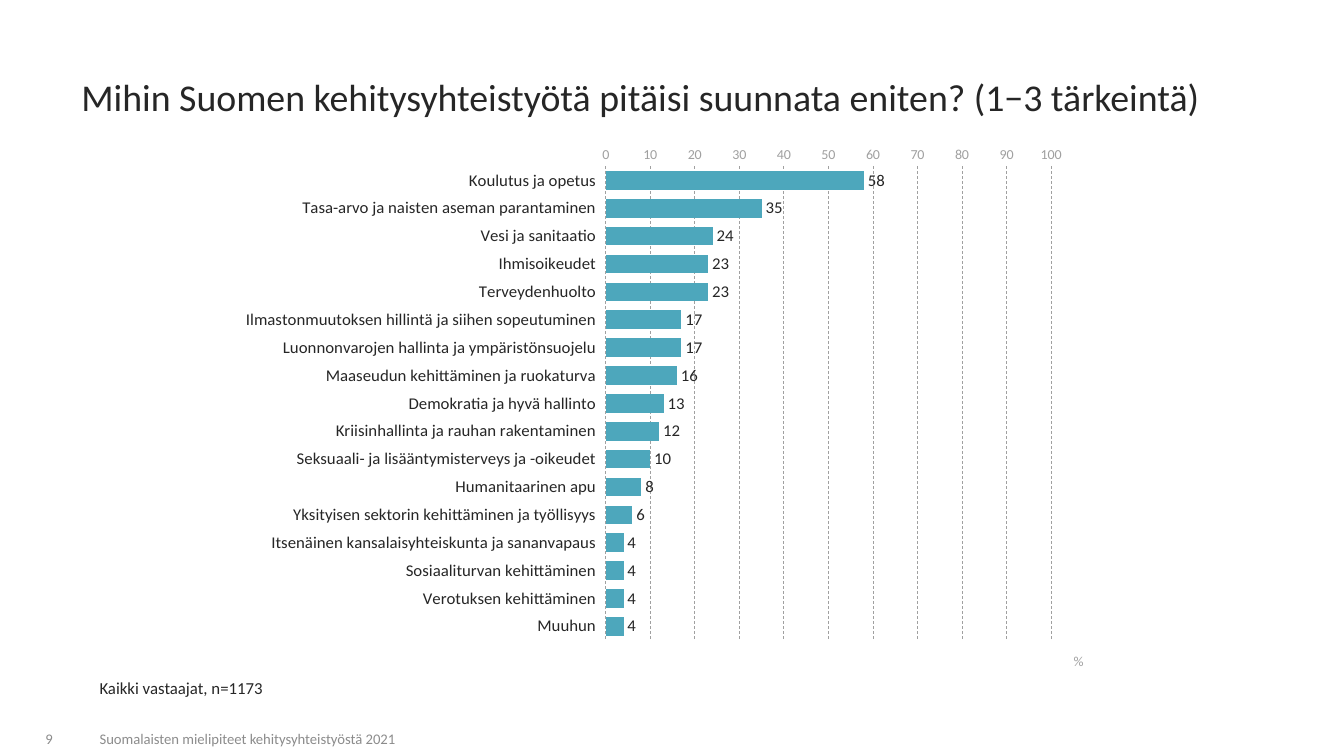
from lxml import etree
from pptx import Presentation
from pptx.chart.data import CategoryChartData
from pptx.dml.color import RGBColor
from pptx.enum.chart import XL_AXIS_CROSSES, XL_CHART_TYPE, XL_LABEL_POSITION, XL_TICK_LABEL_POSITION, XL_TICK_MARK
from pptx.enum.dml import MSO_LINE
from pptx.enum.text import MSO_ANCHOR, PP_ALIGN
from pptx.oxml.ns import qn
from pptx.util import Cm, Pt

COLORS = {"text": "262626", "footer": "8C8C8C", "axis": "A0A0A0", "bar": "4DA7BC"}
FONT = "Calibri"

PRIORITIES = [
    ("Koulutus ja opetus", 58),
    ("Tasa-arvo ja naisten aseman parantaminen", 35),
    ("Vesi ja sanitaatio", 24),
    ("Ihmisoikeudet", 23),
    ("Terveydenhuolto", 23),
    ("Ilmastonmuutoksen hillintä ja siihen sopeutuminen", 17),
    ("Luonnonvarojen hallinta ja ympäristönsuojelu", 17),
    ("Maaseudun kehittäminen ja ruokaturva", 16),
    ("Demokratia ja hyvä hallinto", 13),
    ("Kriisinhallinta ja rauhan rakentaminen", 12),
    ("Seksuaali- ja lisääntymisterveys ja -oikeudet", 10),
    ("Humanitaarinen apu", 8),
    ("Yksityisen sektorin kehittäminen ja työllisyys", 6),
    ("Itsenäinen kansalaisyhteiskunta ja sananvapaus", 4),
    ("Sosiaaliturvan kehittäminen", 4),
    ("Verotuksen kehittäminen", 4),
    ("Muuhun", 4),
]


def style_font(font, size, color):
    font.name = FONT
    font.size = Pt(size)
    font.bold = False
    font.color.rgb = RGBColor.from_string(COLORS[color])


def add_text(page, box, text, size, color, anchor=MSO_ANCHOR.TOP, align=PP_ALIGN.LEFT, spacing=1.0):
    frame = page.shapes.add_textbox(*map(Cm, box)).text_frame
    frame.word_wrap = True
    frame.vertical_anchor = anchor
    para = frame.paragraphs[0]
    para.text = text
    para.alignment = align
    para.line_spacing = spacing
    style_font(para.font, size, color)


def set_layout(parent, position, **settings):
    for previous in parent.findall(qn("c:layout")):
        parent.remove(previous)
    layout = etree.Element(qn("c:layout"))
    manual = etree.SubElement(layout, qn("c:manualLayout"))
    for name, value in settings.items():
        etree.SubElement(manual, qn(f"c:{name}")).set("val", str(value))
    parent.insert(position, layout)


def style_category_axis(axis):
    axis.reverse_order = True
    axis.crosses = XL_AXIS_CROSSES.MAXIMUM
    axis.tick_label_position = XL_TICK_LABEL_POSITION.LOW
    axis.major_tick_mark = XL_TICK_MARK.NONE
    axis.format.line.fill.background()
    style_font(axis.tick_labels.font, 12, "text")


def style_value_axis(axis):
    axis.minimum_scale = 0
    axis.maximum_scale = 100
    axis.major_unit = 10
    axis.major_tick_mark = XL_TICK_MARK.NONE
    axis.format.line.fill.background()
    style_font(axis.tick_labels.font, 10, "axis")
    axis.tick_labels.number_format = "General"
    axis.tick_labels.number_format_is_linked = False
    grid = axis.major_gridlines.format.line
    grid.color.rgb = RGBColor.from_string(COLORS["axis"])
    grid.width = Pt(0.5)
    grid.dash_style = MSO_LINE.DASH
    para = axis.axis_title.text_frame.paragraphs[0]
    para.text = "%"
    style_font(para.font, 10, "axis")
    set_layout(axis.axis_title._element, 1, xMode="edge", yMode="edge", x=0.98, y=0.95)


def add_priority_chart(page, box):
    chart_data = CategoryChartData()
    chart_data.categories = [label for label, share in PRIORITIES]
    chart_data.add_series("Series 1", [share for label, share in PRIORITIES])
    chart = page.shapes.add_chart(XL_CHART_TYPE.BAR_CLUSTERED, *map(Cm, box), chart_data).chart
    chart.has_legend = False
    chart.has_title = False
    style_font(chart.font, 12, "text")
    style_category_axis(chart.category_axis)
    style_value_axis(chart.value_axis)

    plot = chart.plots[0]
    plot.gap_width = 50
    plot.vary_by_categories = False
    fill = plot.series[0].format.fill
    fill.solid()
    fill.fore_color.rgb = RGBColor.from_string(COLORS["bar"])
    plot.has_data_labels = True
    labels = plot.data_labels
    labels.show_value = True
    labels.position = XL_LABEL_POSITION.OUTSIDE_END
    labels.number_format = "#,##0"
    labels.number_format_is_linked = False
    style_font(labels.font, 12, "text")

    plot_area = chart._chartSpace.find(f".//{qn('c:plotArea')}")
    set_layout(plot_area, 0, layoutTarget="inner", xMode="edge", yMode="edge",
               x=0.443, y=0.012, w=0.514, h=0.92)


def add_footer(page, box):
    left, top, width, height = box
    number_width = 1.5
    text_left = left + 2.18
    add_text(page, (left, top, number_width, height), "9", 10.5, "footer",
             MSO_ANCHOR.BOTTOM, PP_ALIGN.RIGHT)
    add_text(page, (text_left, top, width - 2.18, height),
             "Suomalaisten mielipiteet kehitysyhteistyöstä 2021", 10.5, "footer", MSO_ANCHOR.BOTTOM)


def main():
    deck = Presentation()
    deck.slide_width = Cm(33.87)
    deck.slide_height = Cm(19.05)
    page = deck.slides.add_slide(deck.slide_layouts[6])
    add_footer(page, (0.08, 18.19, 17.22, 0.76))
    add_text(page, (1.8, 1.63, 30.66, 1.73),
             "Mihin Suomen kehitysyhteistyötä pitäisi suunnata eniten? (1−3 tärkeintä)",
             27, "text", MSO_ANCHOR.MIDDLE, spacing=0.9)
    add_priority_chart(page, (5.59, 3.71, 21.84, 13.31))
    add_text(page, (2.26, 17.02, 23.32, 0.71), "Kaikki vastaajat, n=1173", 12, "text", spacing=0.9)
    deck.save("out.pptx")


if __name__ == "__main__":
    main()
